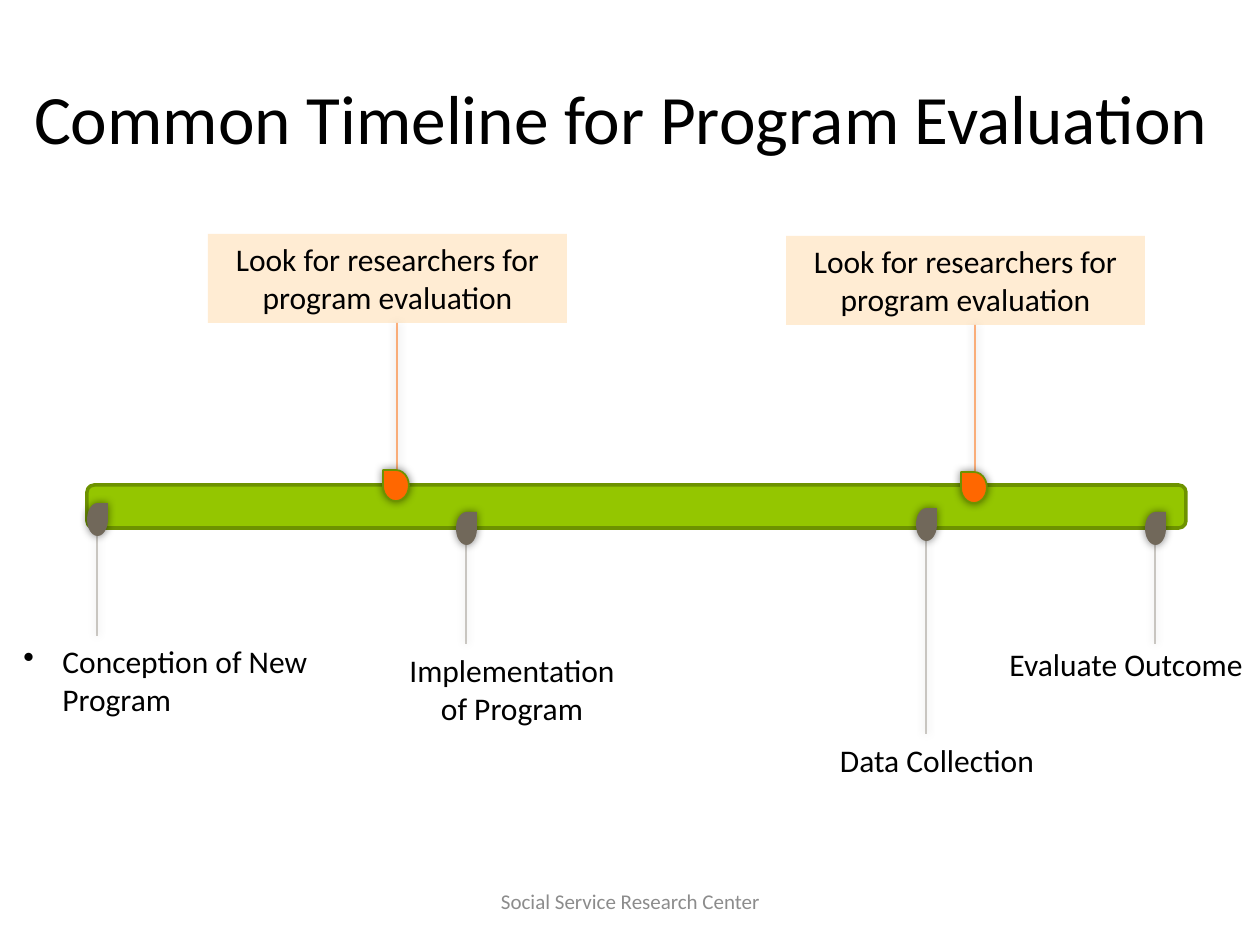
from dataclasses import dataclass

from lxml.etree import SubElement
from pptx import Presentation
from pptx.dml.color import RGBColor
from pptx.enum.shapes import MSO_CONNECTOR, MSO_SHAPE as Preset
from pptx.enum.text import MSO_ANCHOR as Anchor, PP_ALIGN as Align
from pptx.oxml.ns import qn
from pptx.util import Emu, Pt


@dataclass(frozen=True)
class Theme:
    """Colours and type sizes of the slide."""
    font: str = "Calibri"
    text: str = "000000"
    muted: str = "8C8C8C"
    bar: str = "94C600"
    bar_edge: str = "6D9200"
    stage: str = "71685A"
    research: str = "FF6700"
    callout: str = "FFECD3"
    title_size: float = 39.6
    label_size: int = 18
    footer_size: int = 12


THEME = Theme()
PX = 914400 / 126
STAGE_PIN = (21, 33)
RESEARCH_PIN = (26, 31)
CALLOUT = (359, 89)
CALLOUT_TEXT = "Look for researchers for program evaluation"

STAGES = [
    (87, 503, 636, "Conception of New Program", (11, 636, 344, 127), Align.LEFT, True),
    (456, 512, 644, "Implementation of Program", (383, 645, 258, 89), Align.CENTER, False),
    (916, 508, 734, "Data Collection", (791, 735, 292, 50), Align.CENTER, False),
    (1145, 512, 644, "Evaluate Outcome", (963, 639, 292, 50), Align.RIGHT, False),
]
CALLOUTS = [(208, 234), (786, 236)]


def px(*lengths):
    """Turn pixel lengths into EMU."""
    return [Emu(round(length * PX)) for length in lengths]


def rgb(color):
    """Read a hex colour."""
    return RGBColor.from_string(color)


def add_glow(shape):
    """Give a shape or connector its soft shadow."""
    effects = SubElement(shape._element.spPr, qn("a:effectLst"))
    shadow = SubElement(effects, qn("a:outerShdw"), blurRad=str(Pt(5)), dist="0", dir="0", rotWithShape="0")
    color = SubElement(shadow, qn("a:srgbClr"), val="000000")
    SubElement(color, qn("a:alpha"), val="50000")


def write_text(shape, text, size, color=THEME.text, align=Align.CENTER, anchor=Anchor.TOP, bullet=False):
    """Write one wrapped paragraph into a shape."""
    frame = shape.text_frame
    frame.word_wrap = True
    frame.vertical_anchor = anchor
    paragraph = frame.paragraphs[0]
    paragraph.text = text
    paragraph.alignment = align
    paragraph.font.name = THEME.font
    paragraph.font.size = Pt(size)
    paragraph.font.color.rgb = rgb(color)
    if bullet:
        indent = px(39)[0]
        properties = paragraph._p.get_or_add_pPr()
        properties.set("marL", str(indent))
        properties.set("indent", str(-indent))
        mark = properties.makeelement(qn("a:buChar"), {"char": "•"})
        properties.find(qn("a:defRPr")).addprevious(mark)


def add_label(slide, box, text, size, **style):
    """Add a text box."""
    write_text(slide.shapes.add_textbox(*px(*box)), text, size, **style)


def add_block(slide, preset, box, fill, edge=None, edge_width=1):
    """Add a filled preset shape without a shadow."""
    shape = slide.shapes.add_shape(preset, *px(*box))
    shape.fill.solid()
    shape.fill.fore_color.rgb = rgb(fill)
    if edge:
        shape.line.color.rgb = rgb(edge)
        shape.line.width = Pt(edge_width)
    else:
        shape.line.fill.background()
    if preset != Preset.TEAR:
        shape.shadow.inherit = False
    return shape


def add_pin(slide, box, fill, edge=None, flipped=False):
    """Add a teardrop pin with a soft shadow."""
    pin = add_block(slide, Preset.TEAR, box, fill, edge)
    if flipped:
        pin._element.spPr.find(qn("a:xfrm")).set("flipH", "1")
    add_glow(pin)


def add_stem(slide, x, top, bottom, color, opacity):
    """Add a translucent vertical line and return it."""
    stem = slide.shapes.add_connector(MSO_CONNECTOR.STRAIGHT, *px(x, top, x, bottom))
    stem.line.color.rgb = rgb(color)
    stem.line.width = Pt(1)
    color_element = stem._element.spPr.find(".//" + qn("a:srgbClr"))
    SubElement(color_element, qn("a:alpha"), val=str(opacity * 1000))
    add_glow(stem)


def add_stage(slide, left, top, stem_end, text, box, align, bullet):
    """Add a stage below the bar: stem, pin and label."""
    width, height = STAGE_PIN
    add_stem(slide, left + width // 2, top + height, stem_end, THEME.stage, 35)
    add_pin(slide, (left, top, width, height), THEME.stage)
    add_label(slide, box, text, THEME.label_size, align=align, bullet=bullet)


def add_callout(slide, left, top):
    """Add a callout above the bar: box, stem and pin."""
    box = add_block(slide, Preset.RECTANGLE, (left, top, *CALLOUT), THEME.callout)
    write_text(box, CALLOUT_TEXT, THEME.label_size)
    add_stem(slide, left + 189, top + CALLOUT[1], top + 248, THEME.research, 50)
    add_pin(slide, (left + 175, top + 236, *RESEARCH_PIN), THEME.research, THEME.bar_edge, flipped=True)


def main():
    """Build the timeline slide and save it."""
    presentation = Presentation()
    presentation.slide_width, presentation.slide_height = px(1260, 945)
    slide = presentation.slides.add_slide(presentation.slide_layouts[6])
    add_label(slide, (11, 38, 1220, 158), "Common Timeline for Program Evaluation",
              THEME.title_size, anchor=Anchor.MIDDLE)
    add_block(slide, Preset.ROUNDED_RECTANGLE, (87, 485, 1099, 43), THEME.bar, THEME.bar_edge, 2)
    for stage in STAGES:
        add_stage(slide, *stage)
    for corner in CALLOUTS:
        add_callout(slide, *corner)
    add_label(slide, (431, 876, 399, 50), "Social Service Research Center",
              THEME.footer_size, color=THEME.muted, anchor=Anchor.MIDDLE)
    presentation.save("out.pptx")


if __name__ == "__main__":
    main()
